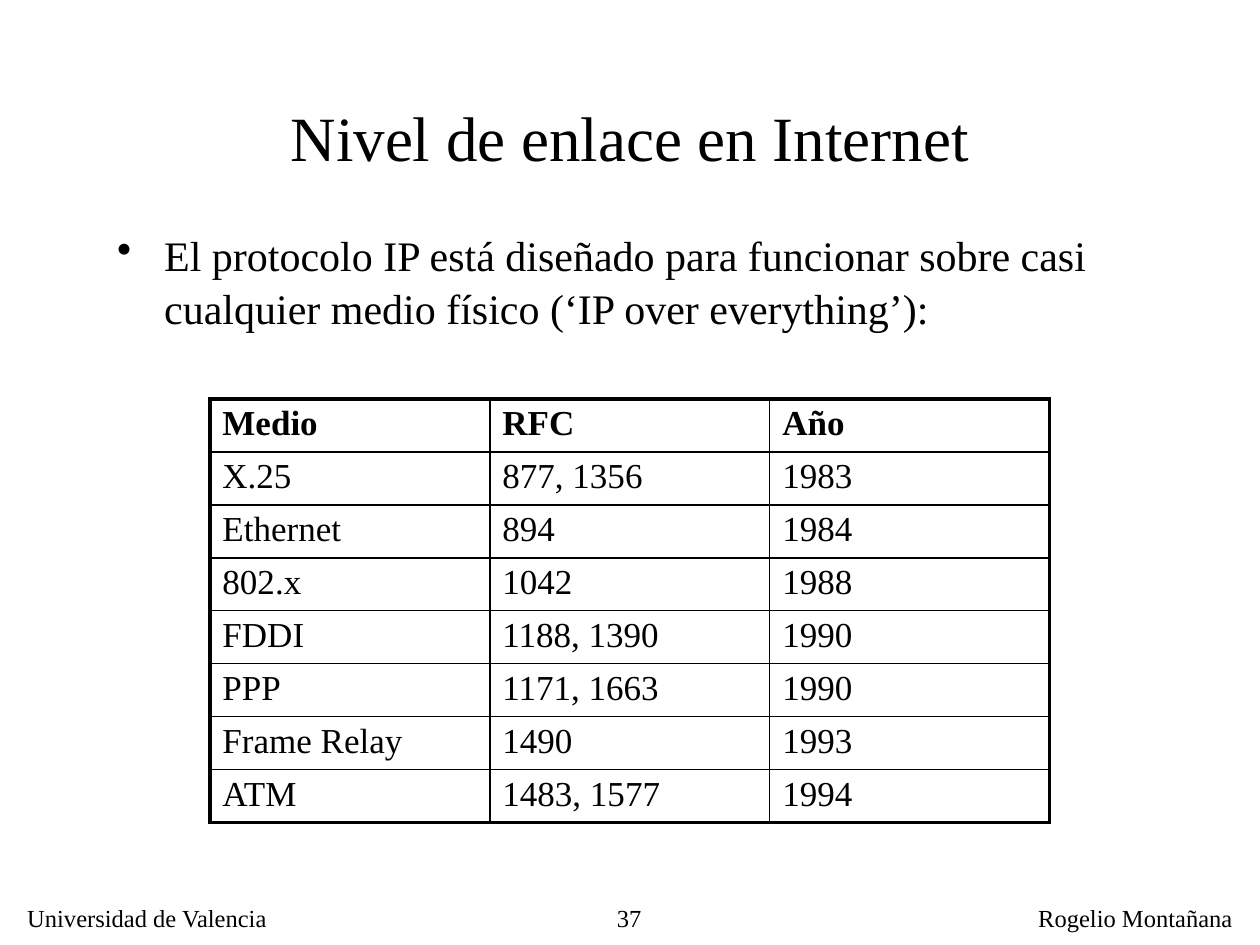
from pptx import Presentation
from pptx.dml.color import RGBColor
from pptx.enum.text import MSO_ANCHOR, PP_ALIGN
from pptx.oxml.xmlchemy import OxmlElement
from pptx.util import Cm, Pt

LEFT, CENTER, RIGHT = PP_ALIGN.LEFT, PP_ALIGN.CENTER, PP_ALIGN.RIGHT
TOP, MIDDLE = MSO_ANCHOR.TOP, MSO_ANCHOR.MIDDLE
FONT = "Times New Roman"
COLORS = {"ink": "000000", "paper": "FFFFFF"}
THIN, THICK = 1, 2.25

MEDIA = [
    ("Medio", "RFC", "Año"),
    ("X.25", "877, 1356", "1983"),
    ("Ethernet", "894", "1984"),
    ("802.x", "1042", "1988"),
    ("FDDI", "1188, 1390", "1990"),
    ("PPP", "1171, 1663", "1990"),
    ("Frame Relay", "1490", "1993"),
    ("ATM", "1483, 1577", "1994"),
]


def write(frame, text, size=20, bold=False, align=LEFT):
    """Put formatted text in a frame and return its paragraph."""
    para = frame.paragraphs[0]
    para.alignment = align
    run = para.add_run()
    run.text = text
    font = run.font
    font.name, font.size, font.bold = FONT, Pt(size), bold
    font.color.rgb = RGBColor.from_string(COLORS["ink"])
    return para


def add_text(slide, box, text, wrap=True, anchor=TOP, **style):
    frame = slide.shapes.add_textbox(*map(Cm, box)).text_frame
    frame.word_wrap = wrap
    frame.vertical_anchor = anchor
    return write(frame, text, **style)


def add_bullet(slide, box, text):
    para = add_text(slide, box, text, size=24)
    para.space_before = Pt(3)
    para.line_spacing = 1.05
    props = para._p.get_or_add_pPr()
    props.set("marL", str(Cm(0.95)))
    props.set("indent", str(Cm(-0.95)))
    mark = OxmlElement("a:buChar")
    mark.set("char", "•")
    props.append(mark)


def set_edge(cell, side, width):
    line = OxmlElement(f"a:{side}")
    line.set("w", str(Pt(width)))
    fill = OxmlElement("a:solidFill")
    color = OxmlElement("a:srgbClr")
    color.set("val", COLORS["ink"])
    fill.append(color)
    line.append(fill)
    cell._tc.get_or_add_tcPr().append(line)


def add_grid(slide, box, data):
    rows, cols = len(data), len(data[0])
    left, top, width, height = box
    table = slide.shapes.add_table(rows, cols, *map(Cm, box)).table
    table.horz_banding = False
    for col in table.columns:
        col.width = Cm(width / cols)
    for row in table.rows:
        row.height = Cm(height / rows)
    for r, line in enumerate(data):
        for c, text in enumerate(line):
            cell = table.cell(r, c)
            cell.margin_top = cell.margin_bottom = Cm(0.11)
            write(cell.text_frame, text, bold=r == 0)
            # Thick outer frame, thin inner lines; edges precede the fill
            outer = {"lnL": c == 0, "lnR": c == cols - 1,
                     "lnT": r == 0, "lnB": r == rows - 1}
            for side, thick in outer.items():
                set_edge(cell, side, THICK if thick else THIN)
            cell.fill.background()


def add_footer(slide, box):
    left, top, width, height = box
    add_text(slide, (left, top, 5.4, height), "Universidad de Valencia",
             wrap=False, size=14)
    add_text(slide, (left + 10.18, top, 2.7, height), "37",
             size=14, align=RIGHT)
    add_text(slide, (left + width - 4.42, top, 4.42, height),
             "Rogelio Montañana", wrap=False, size=14)


def main():
    deck = Presentation()
    deck.slide_width, deck.slide_height = Cm(25.4), Cm(19.05)
    slide = deck.slides.add_slide(deck.slide_layouts[6])
    back = slide.background.fill
    back.solid()
    back.fore_color.rgb = RGBColor.from_string(COLORS["paper"])

    # Footer
    add_footer(slide, (0.3, 18.08, 24.8, 0.84))
    # Title
    add_text(slide, (1.9, 1.7, 21.6, 2.1), "Nivel de enlace en Internet",
             size=36, align=CENTER, anchor=MIDDLE)
    # Body
    add_bullet(slide, (2.11, 4.45, 21.39, 2.54),
               "El protocolo IP está diseñado para funcionar sobre casi "
               "cualquier medio físico (‘IP over everything’):")
    # Table of media
    add_grid(slide, (4.23, 8.04, 16.93, 8.3), MEDIA)

    deck.save("out.pptx")


if __name__ == "__main__":
    main()
